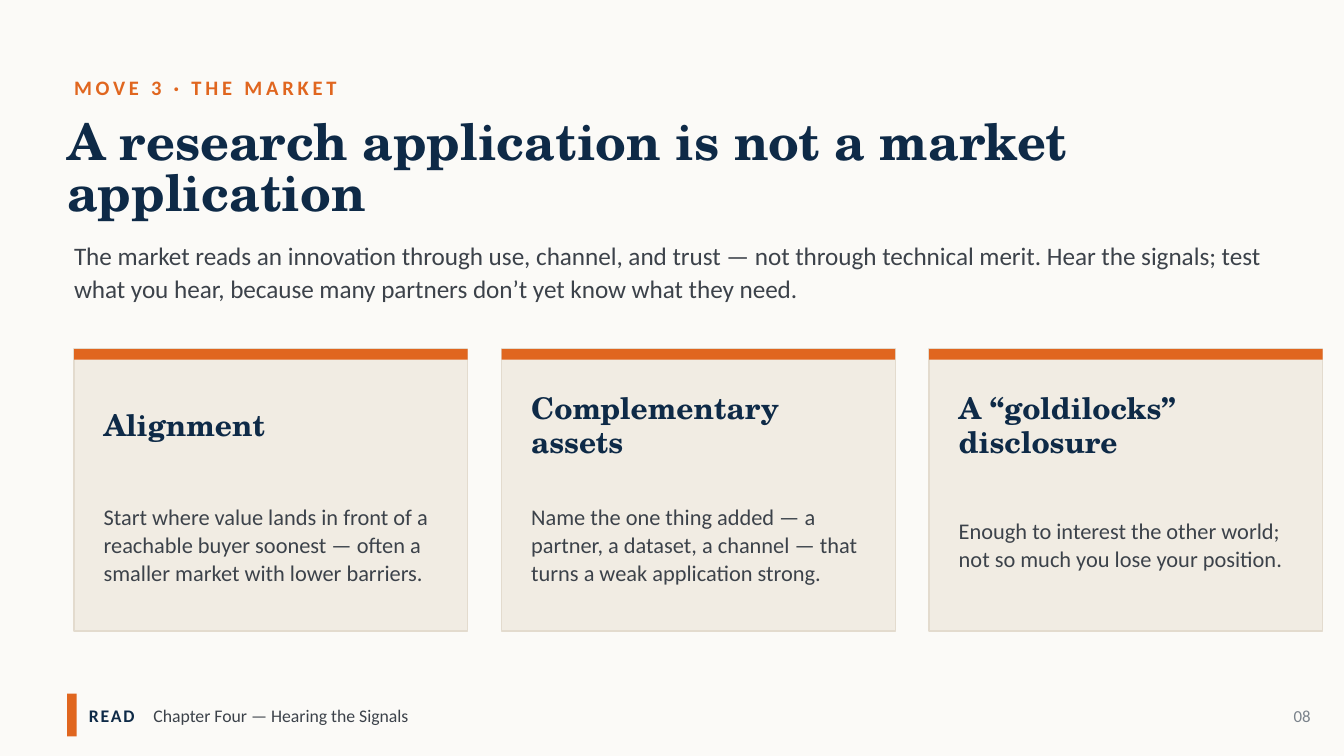
from dataclasses import dataclass

from lxml import etree
from pptx import Presentation
from pptx import util as u
from pptx.dml import color
from pptx.enum import shapes, text
from pptx.oxml import ns


@dataclass(frozen=True)
class Theme:
    """Colours, fonts and text styles: font, size, colour, bold, tracking, leading."""
    paper: str = "FBFAF7"
    navy: str = "0E2A47"
    orange: str = "E0661F"
    slate: str = "3C424A"
    grey: str = "7A828B"
    sand: str = "F1ECE3"
    border: str = "E3DBCE"
    serif: str = "TeX Gyre Schola"
    sans: str = "Calibri"

    def style(self, name):
        return {
            "eyebrow": (self.sans, 11, self.orange, True, 2, None),
            "title": (self.serif, 27, self.navy, True, 0, 27.5),
            "lead": (self.sans, 13.5, self.slate, False, 0, 18),
            "heading": (self.serif, 16, self.navy, True, 0, 18),
            "body": (self.sans, 12, self.slate, False, 0, 15),
            "label": (self.sans, 9.5, self.navy, True, 1, None),
            "source": (self.sans, 9.5, self.slate, False, 0, None),
            "page": (self.sans, 9, self.grey, False, 0, None),
        }[name]


class Builder:
    def __init__(self, deck, theme):
        self.theme = theme
        self.page = deck.slides.add_slide(deck.slide_layouts[5])
        self.paint(self.page.background.fill, theme.paper)

    @staticmethod
    def paint(fill, value):
        fill.solid()
        fill.fore_color.rgb = color.RGBColor.from_string(value)

    def rectangle(self, area, fill, line=None):
        box = self.page.shapes.add_shape(shapes.MSO_SHAPE.RECTANGLE, *map(u.Cm, area))
        box.shadow.inherit = False
        self.paint(box.fill, fill)
        if line:
            self.paint(box.line.fill, line)
            box.line.width = u.Pt(0.75)
        else:
            box.line.fill.background()

    def set_text(self, box, spans, align=text.PP_ALIGN.LEFT, inset=(0, 0), tab=None):
        """Fill a text frame with one paragraph of (words, style) spans."""
        across, down = map(u.Cm, inset)
        frame = {
            "word_wrap": True,
            "auto_size": text.MSO_AUTO_SIZE.NONE,
            "vertical_anchor": text.MSO_ANCHOR.MIDDLE,
            "margin_left": across, "margin_right": across,
            "margin_top": down, "margin_bottom": down,
        }
        for key, value in frame.items():
            setattr(box.text_frame, key, value)
        para = box.text_frame.paragraphs[0]
        para.alignment = align
        if tab:
            stops = etree.SubElement(para._p.get_or_add_pPr(), ns.qn("a:tabLst"))
            etree.SubElement(stops, ns.qn("a:tab"), pos=str(u.Cm(tab)), algn="l")
        for words, name in spans:
            font, size, tint, bold, tracking, leading = self.theme.style(name)
            span = para.add_run()
            span.text = words
            for key, value in {"name": font, "size": u.Pt(size), "bold": bold}.items():
                setattr(span.font, key, value)
            span.font.color.rgb = color.RGBColor.from_string(tint)
            if tracking:
                span.font._element.set("spc", str(tracking * 100))
            if leading:
                para.line_spacing = u.Pt(leading)

    def label(self, area, *spans, **layout):
        box = self.page.shapes.add_textbox(*map(u.Cm, area))
        self.set_text(box, spans, **layout)

    def title(self, area, words):
        box = self.page.shapes.title
        for key, value in zip(("left", "top", "width", "height"), area):
            setattr(box, key, u.Cm(value))
        self.set_text(box, [(words, "title")])

    def card(self, left, top, heading, body):
        width, height, pad = 7.44, 5.33, 0.56
        inner = width - 2 * pad
        self.rectangle((left, top, width, height), self.theme.sand, self.theme.border)
        self.rectangle((left, top, width, 0.2), self.theme.orange)
        self.label((left + pad, top + pad, inner, 1.78), (heading, "heading"))
        self.label((left + pad, top + 2.29, inner, 2.79), (body, "body"))


CARDS = [
    ("Alignment",
     "Start where value lands in front of a reachable buyer soonest — "
     "often a smaller market with lower barriers."),
    ("Complementary assets",
     "Name the one thing added — a partner, a dataset, a channel — "
     "that turns a weak application strong."),
    ("A “goldilocks” disclosure",
     "Enough to interest the other world; not so much you lose your position."),
]


def main():
    deck = Presentation()
    deck.slide_width, deck.slide_height = u.Cm(25.4), u.Cm(14.29)
    theme = Theme()
    builder = Builder(deck, theme)

    # Header
    builder.label((1.4, 1.27, 15.24, 0.76), ("MOVE 3 · THE MARKET", "eyebrow"))
    builder.title((1.27, 2.08, 22.86, 2.29),
                  "A research application is not a market application")
    builder.label((1.4, 4.22, 22.61, 1.78), (
        "The market reads an innovation through use, channel, and trust — "
        "not through technical merit. Hear the signals; test what you hear, "
        "because many partners don’t yet know what they need.", "lead"))

    # Three cards at an equal pitch
    for index, (heading, body) in enumerate(CARDS):
        builder.card(1.4 + index * 8.08, 6.6, heading, body)

    # Footer
    builder.rectangle((1.27, 13.11, 0.18, 0.81), theme.orange)
    builder.label((1.68, 13.03, 15.75, 0.97), ("READ", "label"),
                  ("\tChapter Four — Hearing the Signals", "source"), tab=1.22)
    builder.label((23.75, 13.16, 1.27, 0.76), ("08", "page"),
                  align=text.PP_ALIGN.RIGHT, inset=(0.25, 0.13))

    deck.save("out.pptx")


if __name__ == "__main__":
    main()
